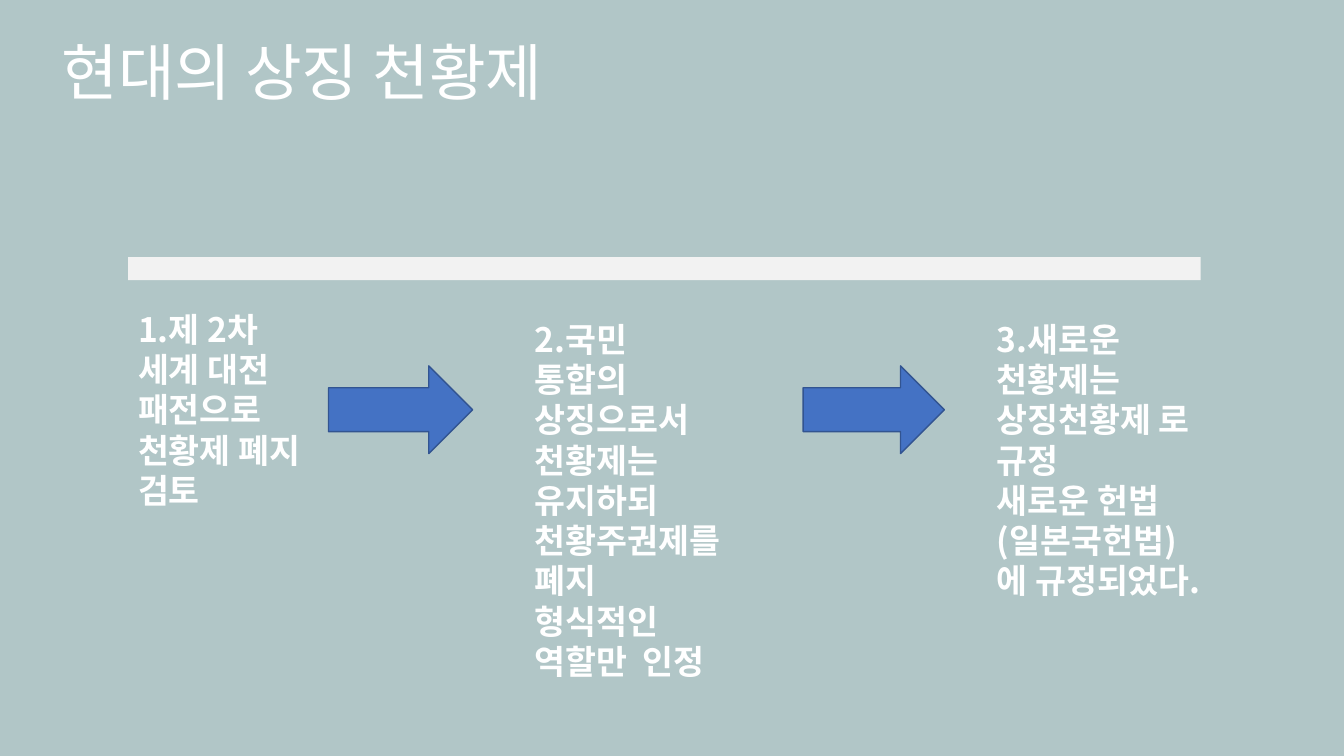
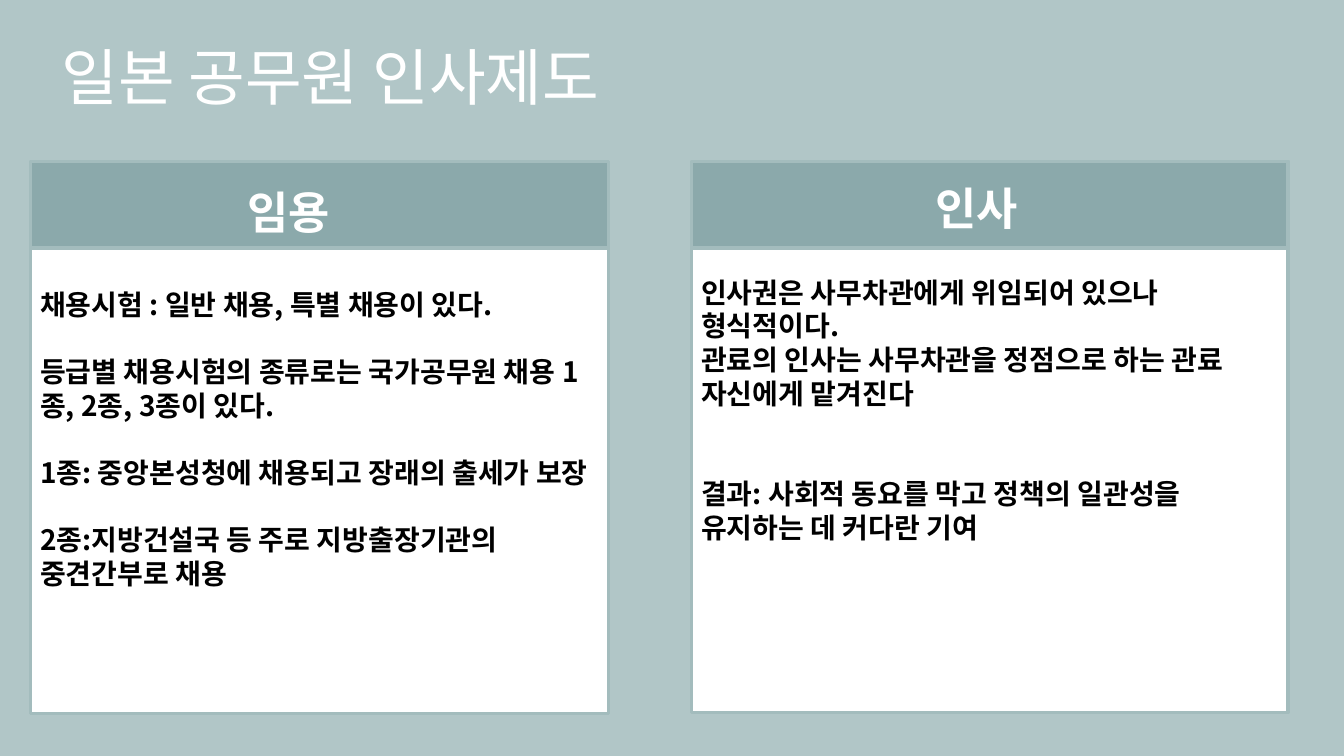
import pptx
import pptx.dml.color
import pptx.enum.shapes
import pptx.oxml
import pptx.oxml.ns
import pptx.util

Cm = pptx.util.Cm
Pt = pptx.util.Pt
SHAPES = pptx.enum.shapes.MSO_SHAPE

FONT = "Noto Sans CJK KR"
COLORS = {
    "background": "B1C6C7",
    "white": "FFFFFF",
    "black": "000000",
    "bar": "F2F2F2",
    "arrow": "4472C4",
    "arrow_edge": "325491",
    "header": "8BA9AB",
    "panel_edge": "A3BCBD",
}


def rgb(name):
    return pptx.dml.color.RGBColor.from_string(COLORS[name])


def add_text(slide, box, paragraphs, size, color="white", bold=True):
    frame = slide.shapes.add_textbox(*map(Cm, box)).text_frame
    frame.word_wrap = True
    for index, (text, gap) in enumerate(paragraphs):
        paragraph = frame.paragraphs[0] if index == 0 else frame.add_paragraph()
        if gap:
            paragraph.space_before = Pt(gap)
        run = paragraph.add_run()
        run.text = text
        run.font.name = FONT
        run.font.size = Pt(size)
        run.font.bold = bold
        run.font.color.rgb = rgb(color)
        east_asian = pptx.oxml.parse_xml(
            f'<a:ea {pptx.oxml.ns.nsdecls("a")} typeface="{FONT}"/>'
        )
        run.font._element.find(pptx.oxml.ns.qn("a:latin")).addnext(east_asian)


def add_block(slide, kind, box, fill, edge=None, edge_width=1):
    block = slide.shapes.add_shape(kind, *map(Cm, box))
    block.shadow.inherit = False
    block.fill.solid()
    block.fill.fore_color.rgb = rgb(fill)
    if edge:
        block.line.color.rgb = rgb(edge)
        block.line.width = Pt(edge_width)
    else:
        block.line.fill.background()


def add_titled_slide(deck, title, title_top):
    slide = deck.slides.add_slide(deck.slide_layouts[6])
    slide.background.fill.solid()
    slide.background.fill.fore_color.rgb = rgb("background")
    add_text(slide, (1.3, title_top, 21.16, 2.13), [(title, 0)], 44, bold=False)
    return slide


def add_step_flow(slide, box, steps, arrows):
    left, top, width, height = box
    add_block(slide, SHAPES.RECTANGLE, (left, top, width, 0.58), "bar")
    for offset, drop, step_width, lines in steps:
        step_box = (left + offset, top + drop, step_width, height - drop)
        add_text(slide, step_box, [(line, 0) for line in lines], 24)
    for offset, arrow_width in arrows:
        arrow_box = (left + offset, top + 2.74, arrow_width, 2.21)
        add_block(slide, SHAPES.RIGHT_ARROW, arrow_box, "arrow", "arrow_edge")


def add_panel(slide, box, heading, heading_offset, paragraphs, text_drop, text_width):
    left, top, width, height = box
    for part_height, fill in ((height, "white"), (2.18, "header")):
        part_box = (left, top, width, part_height)
        add_block(slide, SHAPES.RECTANGLE, part_box, fill, "panel_edge", 2.25)
    right, down = heading_offset
    add_text(slide, (left + right, top + down, 3.5, 1.62), [(heading, 0)], 32)
    text_box = (left, top + text_drop, text_width, height - text_drop)
    add_text(slide, text_box, paragraphs, 20, "black")


def build_emperor_slide(deck):
    slide = add_titled_slide(deck, "현대의 상징 천황제", 0.74)
    steps = [
        (0, 1.17, 4.75, ["1.제 2차 세계 대전 패전으로", "천황제 폐지 검토"]),
        (10, 1.42, 5.33, [
            "2.국민 통합의 상징으로서 천황제는 유지하되 "
            "천황주권제를 폐지 형식적인 역할만  인정",
        ]),
        (21.64, 1.42, 5.41, [
            "3.새로운 천황제는 상징천황제 로 규정",
            "새로운 헌법(일본국헌법)에 규정되었다.",
        ]),
    ]
    add_step_flow(slide, (3.23, 6.48, 27.03, 10.13), steps,
                  [(5.05, 3.63), (17.01, 3.56)])


def build_personnel_slide(deck):
    slide = add_titled_slide(deck, "일본 공무원 인사제도", 0.86)
    recruitment = [
        ("채용시험 : 일반 채용, 특별 채용이 있다.", 0),
        ("등급별 채용시험의 종류로는 국가공무원 채용 1종, 2종, 3종이 있다.", 24),
        ("1종: 중앙본성청에 채용되고 장래의 출세가 보장", 24),
        ("2종:지방건설국 등 주로 지방출장기관의 중견간부로 채용", 24),
    ]
    personnel = [
        ("인사권은 사무차관에게 위임되어 있으나 형식적이다.", 0),
        ("관료의 인사는 사무차관을 정점으로 하는 관료 자신에게 맡겨진다", 0),
        ("결과: 사회적 동요를 막고 정책의 일관성을 유지하는 데 커다란 기여", 48),
    ]
    add_panel(slide, (0.76, 4.07, 14.58, 13.92), "임용", (5.23, 0.45),
              recruitment, 3.05, 14.58)
    add_panel(slide, (17.42, 4.07, 15.04, 13.89), "인사", (5.9, 0.35),
              personnel, 2.74, 14.35)


def main():
    deck = pptx.Presentation()
    deck.slide_width = Cm(33.87)
    deck.slide_height = Cm(19.05)
    build_emperor_slide(deck)
    build_personnel_slide(deck)
    deck.save("out.pptx")


if __name__ == "__main__":
    main()
